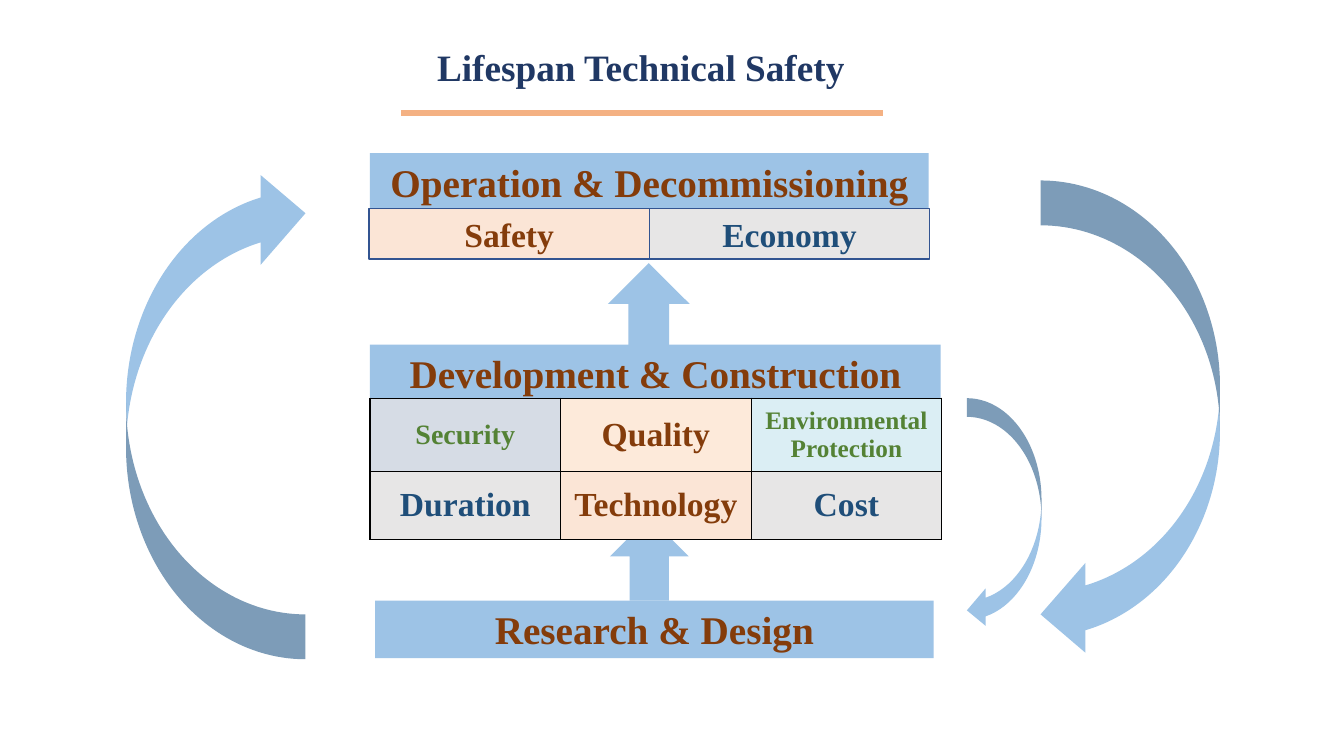
from lxml import etree
from pptx import Presentation
from pptx.dml.color import RGBColor
from pptx.enum.shapes import MSO_CONNECTOR, MSO_SHAPE
from pptx.enum.text import MSO_ANCHOR, PP_ALIGN
from pptx.oxml.ns import qn
from pptx.util import Inches, Pt

RECT = MSO_SHAPE.RECTANGLE
UP = MSO_SHAPE.UP_ARROW
CURVE = MSO_SHAPE.CURVED_LEFT_ARROW
STRAIGHT = MSO_CONNECTOR.STRAIGHT
TOP, MIDDLE = MSO_ANCHOR.TOP, MSO_ANCHOR.MIDDLE
CENTER = PP_ALIGN.CENTER

BLUE, BROWN, NAVY, GREEN = "9DC3E6", "843C0B", "1F4E79", "548235"
PEACH, GREY = "FBE5D6", "E7E6E6"


def color(code):
    return RGBColor.from_string(code)


class Board:
    font = "Times New Roman"

    def __init__(self, slide):
        self.slide = slide

    def label(self, frame, text, size, ink, after=0):
        frame.word_wrap = True
        para = frame.paragraphs[0]
        para.alignment = CENTER
        para.space_after = Pt(after)
        run = para.add_run()
        run.text = text
        run.font.name = self.font
        run.font.size = Pt(size)
        run.font.bold = True
        run.font.color.rgb = color(ink)

    def shape(self, kind, box, fill=BLUE, edge=None, turn=0):
        item = self.slide.shapes.add_shape(kind, *map(Inches, box))
        item.shadow.inherit = False
        item.fill.solid()
        item.fill.fore_color.rgb = color(fill)
        if edge:
            item.line.color.rgb = color(edge)
            item.line.width = Pt(1)
        else:
            item.line.fill.background()
        item.rotation = turn
        return item

    def panel(self, box, text, size=28, ink=BROWN, fill=BLUE, edge=None):
        frame = self.shape(RECT, box, fill, edge).text_frame
        frame.vertical_anchor = TOP
        self.label(frame, text, size, ink)

    def title(self, box, text, size, ink):
        frame = self.slide.shapes.add_textbox(*map(Inches, box)).text_frame
        self.label(frame, text, size, ink, after=6)

    def rule(self, left, right, top, ink, width):
        ends = map(Inches, (left, top, right, top))
        line = self.slide.shapes.add_connector(STRAIGHT, *ends)
        line.line.color.rgb = color(ink)
        line.line.width = Pt(width)
        props = line._element.spPr
        etree.SubElement(props, qn("a:effectLst"))

    def border(self, cell, ink="000000"):
        props = cell._tc.get_or_add_tcPr()
        for side in "LRTB":
            line = etree.SubElement(props, qn(f"a:ln{side}"), w=str(Pt(1)))
            fill = etree.SubElement(line, qn("a:solidFill"))
            etree.SubElement(fill, qn("a:srgbClr"), val=ink)

    def table(self, left, top, width, heights, rows):
        """Each cell is given as text, size, ink and fill."""
        box = map(Inches, (left, top, width * len(rows[0]), sum(heights)))
        grid = self.slide.shapes.add_table(len(rows), len(rows[0]), *box).table
        grid.first_row = grid.horz_banding = False
        for col in grid.columns:
            col.width = Inches(width)
        for r, (high, row) in enumerate(zip(heights, rows)):
            grid.rows[r].height = Inches(high)
            for c, (text, size, ink, fill) in enumerate(row):
                cell = grid.cell(r, c)
                self.border(cell)
                cell.fill.solid()
                cell.fill.fore_color.rgb = color(fill)
                cell.vertical_anchor = MIDDLE
                cell.margin_left = cell.margin_right = Inches(0.12)
                cell.margin_top = cell.margin_bottom = Inches(0.07)
                self.label(cell.text_frame, text, size, ink)


def main():
    deck = Presentation()
    deck.slide_width, deck.slide_height = Inches(13.33), Inches(7.5)
    board = Board(deck.slides.add_slide(deck.slide_layouts[6]))

    board.panel((3.67, 3.42, 5.66, 1.78), "Development & Construction")
    board.panel((3.67, 1.52, 5.54, 0.57), "Operation & Decommissioning")
    goals = [("Safety", BROWN, PEACH), ("Economy", NAVY, GREY)]
    for i, (text, ink, fill) in enumerate(goals):
        box = (3.66 + 2.78 * i, 2.07, 2.78, 0.5)
        board.panel(box, text, 24, ink, fill, edge="325491")
    board.panel((3.72, 5.96, 5.54, 0.57), "Research & Design")

    board.shape(UP, (6.05, 5.13, 0.78, 0.83))
    board.shape(UP, (6.03, 2.61, 0.81, 0.92))
    board.shape(CURVE, (10.32, 1.79, 1.78, 4.75))
    board.shape(CURVE, (9.59, 3.95, 0.74, 2.29))
    board.shape(CURVE, (1.25, 1.67, 1.78, 4.87), turn=180)

    board.table(3.67, 3.95, 1.89, (0.73, 0.67), [
        [("Security", 20, GREEN, "D6DCE5"),
         ("Quality", 24, BROWN, "FDEADA"),
         ("Environmental Protection", 18, GREEN, "DBEEF4")],
        [("Duration", 24, NAVY, GREY),
         ("Technology", 24, BROWN, PEACH),
         ("Cost", 24, NAVY, GREY)],
    ])

    board.rule(3.98, 8.76, 1.12, "F4B183", 4.5)
    board.title((2.84, 0.39, 7.04, 0.55), "Lifespan Technical Safety",
                26.6, "203864")
    deck.save("out.pptx")


if __name__ == "__main__":
    main()
